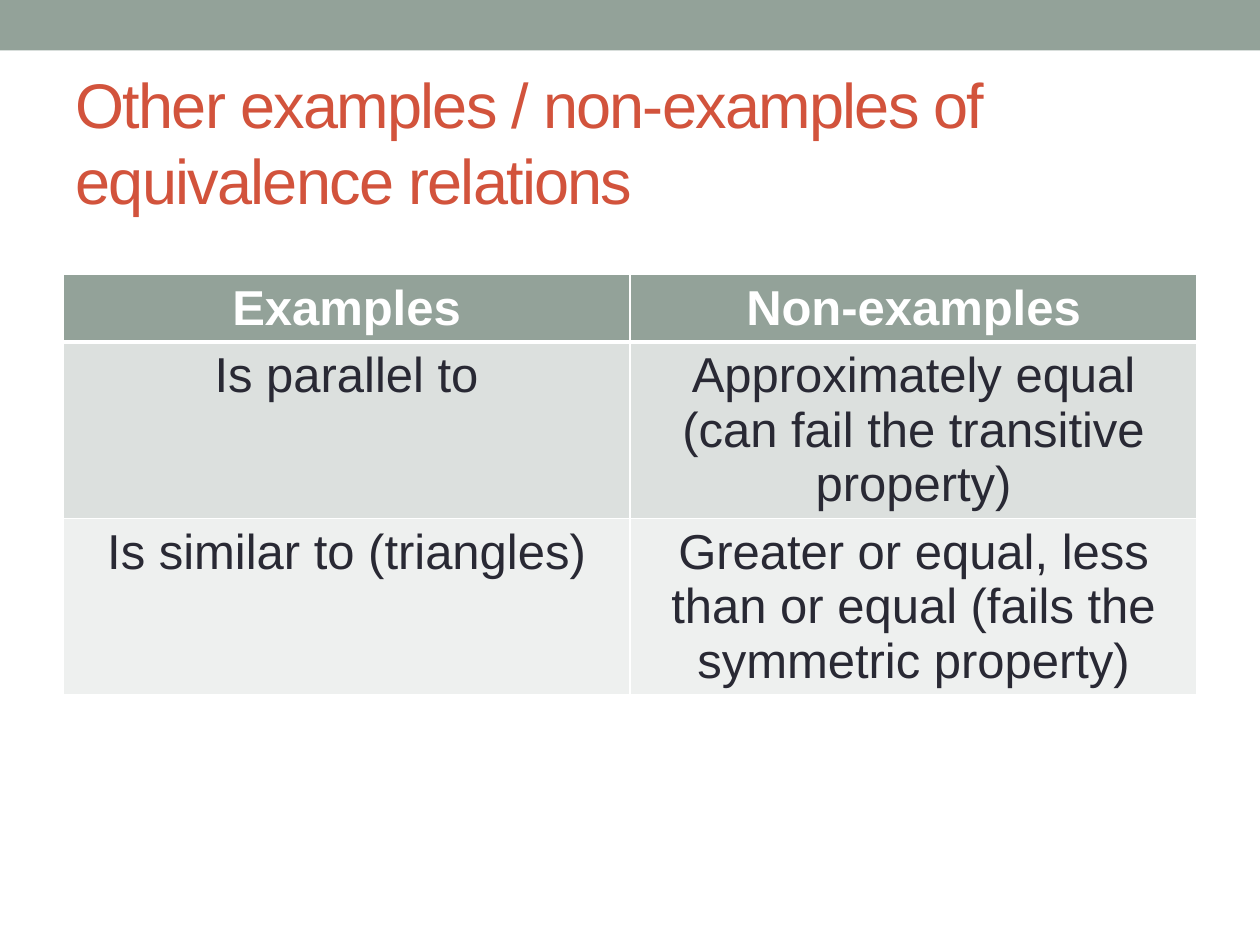
from dataclasses import dataclass

from lxml import etree
from pptx import Presentation
from pptx import util as u
from pptx.dml.color import RGBColor
from pptx.enum import shapes, text
from pptx.oxml import ns


@dataclass(frozen=True)
class Theme:
    face: str = "Arial"
    sage: str = "93A299"
    rust: str = "D2533C"
    ink: str = "292934"
    white: str = "FFFFFF"
    bands: tuple = ("DCE0DE", "EEF0EF")
    head: int = 36
    body: int = 28


LOOK = Theme()
WIDE, HIGH = u.Inches(10), u.Inches(7.5)
EDGE = 0.05
ROWS = (
    ("Examples", "Non-examples"),
    ("Is parallel to", "Approximately equal (can fail the transitive property)"),
    (
        "Is similar to (triangles)",
        "Greater or equal, less than or equal (fails the symmetric property)",
    ),
)


def area(left, top, width, height):
    return int(left * WIDE), int(top * HIGH), int(width * WIDE), int(height * HIGH)


def paint(item, color):
    item.fill.solid()
    item.fill.fore_color.rgb = RGBColor.from_string(color)


def style(run, size, color, bold=False):
    for key, value in {"name": LOOK.face, "size": u.Pt(size), "bold": bold}.items():
        setattr(run.font, key, value)
    run.font.color.rgb = RGBColor.from_string(color)


def border(cell, widths):
    props = cell._tc.get_or_add_tcPr()
    for spot, (side, width) in enumerate(widths.items()):
        line = etree.Element(ns.qn(f"a:ln{side}"), w=str(u.Pt(width)))
        fill = etree.SubElement(line, ns.qn("a:solidFill"))
        etree.SubElement(fill, ns.qn("a:srgbClr"), val=LOOK.white)
        props.insert(spot, line)


def band(slide):
    bar = slide.shapes.add_shape(shapes.MSO_SHAPE.RECTANGLE, *area(0, 0, 1, 0.4 / 7.5))
    paint(bar, LOOK.sage)
    bar.line.fill.background()
    bar.shadow.inherit = False


def title(slide, words):
    head = slide.shapes.title
    box = area(EDGE, 0.58 / 7.5, 1 - 2 * EDGE, 1.08 / 7.5)
    for key, value in zip(("left", "top", "width", "height"), box):
        setattr(head, key, value)
    frame = head.text_frame
    form = {
        "text": words,
        "word_wrap": True,
        "auto_size": text.MSO_AUTO_SIZE.NONE,
        "vertical_anchor": text.MSO_ANCHOR.MIDDLE,
    }
    for key, value in form.items():
        setattr(frame, key, value)
    para = frame.paragraphs[0]
    para.alignment = text.PP_ALIGN.LEFT
    run = para.runs[0]
    style(run, LOOK.head, LOOK.rust)
    run.font._element.set("spc", "-100")


def grid(slide, rows):
    box = area(EDGE, 2.18 / 7.5, 1 - 2 * EDGE, len(rows) * 0.41 / 7.5)
    table = slide.shapes.add_table(len(rows), len(rows[0]), *box).table
    for r, row in enumerate(rows):
        top = r == 0
        for c, words in enumerate(row):
            cell = table.cell(r, c)
            cell.text = words
            para = cell.text_frame.paragraphs[0]
            para.alignment = text.PP_ALIGN.CENTER
            style(para.runs[0], LOOK.body, LOOK.white if top else LOOK.ink, top)
            paint(cell, LOOK.sage if top else LOOK.bands[(r - 1) % 2])
            border(cell, {"L": 1, "R": 1, "T": 3 if r == 1 else 1, "B": 3 if top else 1})


def main():
    deck = Presentation()
    deck.slide_width, deck.slide_height = WIDE, HIGH
    slide = deck.slides.add_slide(deck.slide_layouts[5])
    band(slide)
    title(slide, "Other examples / non-examples of equivalence relations")
    grid(slide, ROWS)
    deck.save("out.pptx")


if __name__ == "__main__":
    main()
